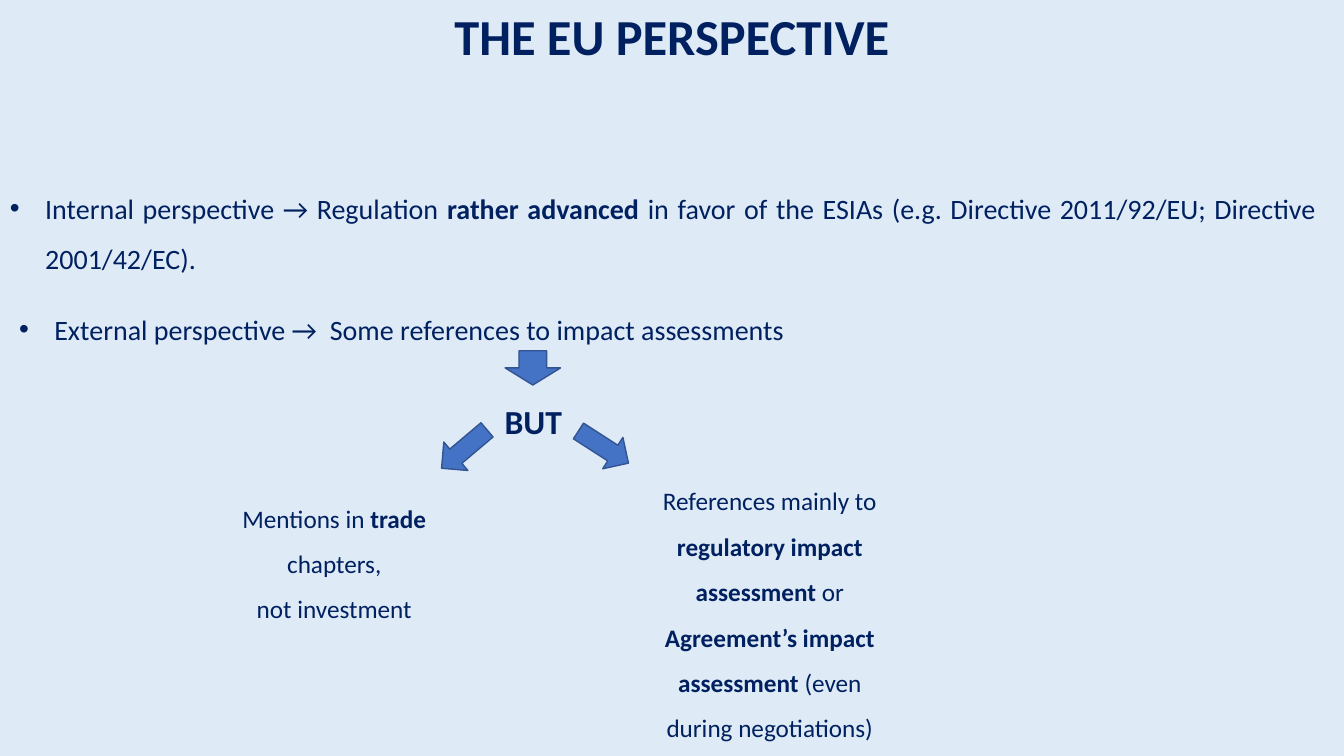
from dataclasses import dataclass

from lxml import etree
from pptx import Presentation
from pptx.dml.color import RGBColor
from pptx.enum.shapes import MSO_SHAPE
from pptx.enum.text import MSO_AUTO_SIZE, PP_ALIGN
from pptx.oxml.ns import qn
from pptx.util import Pt

PX = 9144  # 100 px to the inch
DOWN = MSO_SHAPE.DOWN_ARROW
GROW = MSO_AUTO_SIZE.SHAPE_TO_FIT_TEXT
CENTER, JUSTIFY = PP_ALIGN.CENTER, PP_ALIGN.JUSTIFY


@dataclass(frozen=True)
class Theme:
    font: str = "Calibri"
    back: str = "DEEBF7"
    ink: str = "002060"
    fill: str = "4472C4"
    edge: str = "325491"
    title: int = 36
    head: int = 24
    body: int = 20
    note: int = 18


class Board:
    def __init__(self, slide, theme):
        self.slide = slide
        self.theme = theme
        back = slide.background.fill
        back.solid()
        back.fore_color.rgb = RGBColor.from_string(theme.back)

    def text(self, box, runs, size, align=CENTER, spaced=True):
        """Each run is (words, bold); None stands for a line break."""
        frame = self.slide.shapes.add_textbox(*(n * PX for n in box)).text_frame
        frame.word_wrap = True
        frame.auto_size = GROW
        para = frame.paragraphs[0]
        para.alignment = align
        if spaced:
            para.line_spacing = 1.5
            para.space_before = para.space_after = Pt(6)
        for item in runs:
            if item is None:
                para.add_line_break()
                continue
            run = para.add_run()
            run.text, run.font.bold = item
            run.font.name = self.theme.font
            run.font.size = Pt(size)
            run.font.color.rgb = RGBColor.from_string(self.theme.ink)
        return para

    def bullet(self, box, runs):
        para = self.text(box, runs, self.theme.body, JUSTIFY)
        props = para._p.get_or_add_pPr()
        props.set("marL", str(35 * PX))
        props.set("indent", str(-38 * PX))
        etree.SubElement(props, qn("a:buFont")).set("typeface", "Arial")
        etree.SubElement(props, qn("a:buChar")).set("char", "•")

    def arrow(self, box, turn=0):
        shape = self.slide.shapes.add_shape(DOWN, *(n * PX for n in box))
        shape.rotation = turn
        shape.shadow.inherit = False
        shape.fill.solid()
        shape.fill.fore_color.rgb = RGBColor.from_string(self.theme.fill)
        shape.line.color.rgb = RGBColor.from_string(self.theme.edge)
        shape.line.width = Pt(1)


def main():
    deck = Presentation()
    deck.slide_width, deck.slide_height = 1333 * PX, 750 * PX
    theme = Theme()
    board = Board(deck.slides.add_slide(deck.slide_layouts[6]), theme)

    # Title
    board.text((0, 0, 1333, 71), [("THE EU PERSPECTIVE", True)],
               theme.title, spaced=False)

    # Two perspectives
    board.bullet((0, 168, 1315, 106), [
        ("Internal perspective → Regulation ", False),
        ("rather advanced ", True),
        ("in favor of the ESIAs (e.g. Directive 2011/92/EU; "
         "Directive 2001/42/EC). ", False),
    ])
    board.bullet((9, 288, 1315, 55), [
        ("External perspective →  Some references to impact assessments ", False),
    ])

    # Caveat and its two branches
    board.text((472, 373, 114, 64), [("BUT", True)], theme.head)
    board.text((202, 479, 259, 142), [
        ("Mentions in ", False),
        ("trade ", True),
        ("chapters,", False),
        None,
        ("not investment", False),
    ], theme.note)
    board.text((634, 462, 259, 278), [
        ("References mainly to ", False),
        ("regulatory impact assessment ", True),
        ("or ", False),
        ("Agreement’s impact assessment ", True),
        ("(even during negotiations)", False),
    ], theme.note)

    # Arrows
    board.arrow((580, 414, 37, 59), 302.8)
    board.arrow((442, 416, 37, 59), 49.8)
    board.arrow((501, 348, 55, 34))

    deck.save("out.pptx")


if __name__ == "__main__":
    main()
